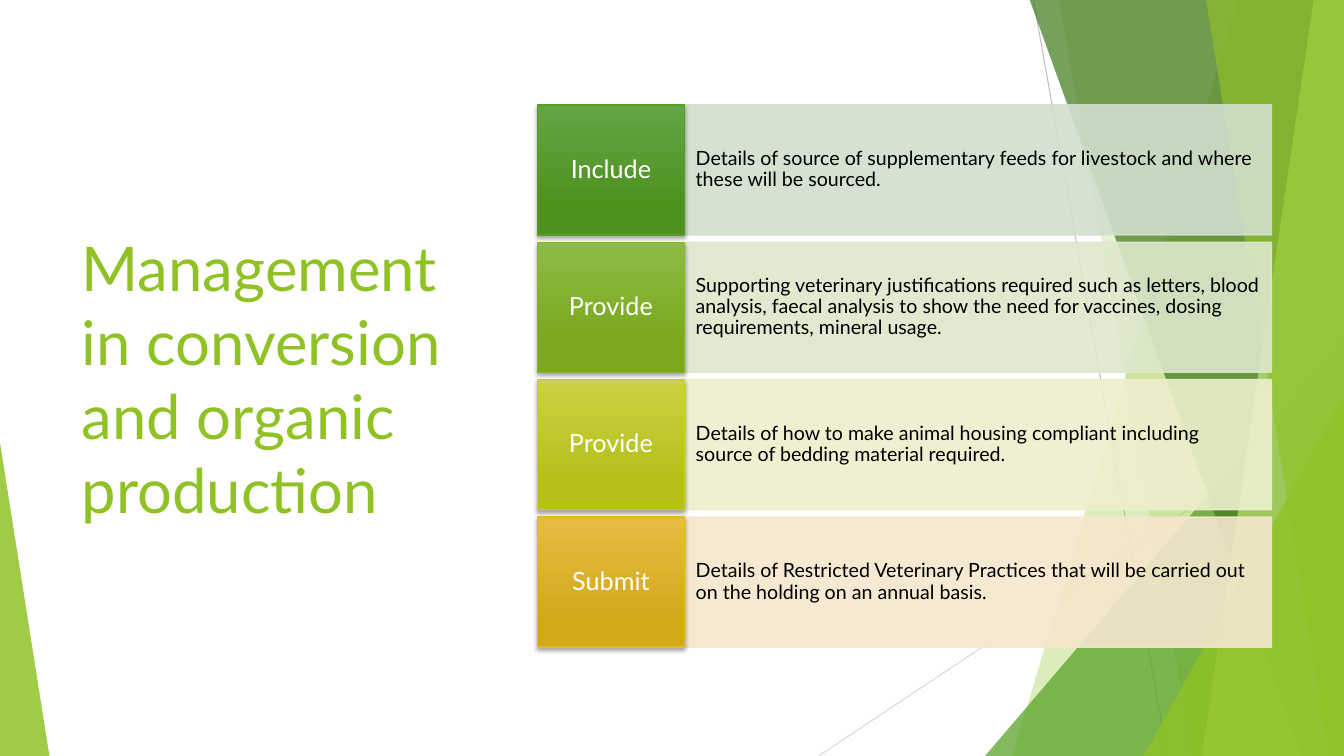
from lxml import etree
from pptx import Presentation
from pptx import util as u
from pptx.dml.color import RGBColor
from pptx.enum import shapes, text
from pptx.oxml import ns

WHITE = RGBColor(0xFF, 0xFF, 0xFF)
BLACK = RGBColor(0x00, 0x00, 0x00)
LIME = RGBColor(0x90, 0xC2, 0x26)
GREEN = RGBColor(0x54, 0xA0, 0x21)
FOREST = RGBColor(0x3F, 0x78, 0x19)
PALE_LIME = RGBColor(0xC0, 0xE4, 0x74)
SILVER = RGBColor(0xBF, 0xBF, 0xBF)
MIST = RGBColor(0xD9, 0xD9, 0xD9)

TITLE = "Management in conversion and organic production"
ROWS = [
    ("Include",
     "Details of source of supplementary feeds for livestock and where these will be sourced.",
     "D1DFCD", "63A545", "4D921E", "54A021"),
    ("Provide",
     "Supporting veterinary justifications required such as letters, blood analysis, "
     "faecal analysis to show the need for vaccines, dosing requirements, mineral usage.",
     "DCE8CC", "8EBB44", "7BA81D", "86B820"),
    ("Provide",
     "Details of how to make animal housing compliant including source of bedding "
     "material required.",
     "EEEFCC", "CAD243", "B6BF1B", "C7D01D"),
    ("Submit",
     "Details of Restricted Veterinary Practices that will be carried out on the holding "
     "on an annual basis.",
     "F5E7CD", "E7BC43", "D2A91B", "E6B91E"),
]

TOP, BOTTOM, RIGHT = -0.01, 7.5, 13.33
ROW_TOP, ROW_PITCH, ROW_HEIGHT = 1.04, 4.09 / 3, 1.29
LABEL_LEFT, LABEL_WIDTH, DETAIL_WIDTH = 5.33, 1.46, 5.82


def sub(parent, tag, **attrs):
    return etree.SubElement(parent, ns.qn(tag), {k: str(v) for k, v in attrs.items()})


def apply(obj, values):
    for name, value in values.items():
        setattr(obj, name, value)


class Deck:
    font = "Lato"

    def __init__(self, prs):
        self.slide = prs.slides.add_slide(prs.slide_layouts[5])
        self.shapes = self.slide.shapes

    def fade(self, fill, alpha):
        color = fill._xPr.find(ns.qn("a:solidFill"))[0]
        sub(color, "a:alpha", val=alpha * 1000)

    def paint(self, sp, color, alpha):
        sp.shadow.inherit = False
        sp.fill.solid()
        sp.fill.fore_color.rgb = color
        self.fade(sp.fill, alpha)
        sp.line.fill.background()

    def set_text(self, sp, words, size, color, align, inset=(0.1, 0.05), spacing=None):
        x, y = map(u.Inches, inset)
        tf = sp.text_frame
        apply(tf, dict(word_wrap=True, auto_size=text.MSO_AUTO_SIZE.NONE,
                       vertical_anchor=text.MSO_ANCHOR.MIDDLE,
                       margin_left=x, margin_right=x, margin_top=y, margin_bottom=y))
        p = tf.paragraphs[0]
        apply(p, dict(alignment=align, line_spacing=spacing))
        r = p.add_run()
        r.text = words
        apply(r.font, dict(name=self.font, size=u.Pt(size)))
        r.font.color.rgb = color

    def title(self, words, box):
        sp = self.shapes.title
        apply(sp, dict(zip(("left", "top", "width", "height"), map(u.Inches, box))))
        self.set_text(sp, words, 44, LIME, text.PP_ALIGN.LEFT)

    def line(self, start, end, color):
        cx = self.shapes.add_connector(shapes.MSO_CONNECTOR.STRAIGHT,
                                       *map(u.Inches, start + end))
        cx.line.width = u.Pt(0.75)
        cx.line.color.rgb = color
        sub(cx._element.spPr, "a:effectLst")

    def facet(self, top_x, bottom_x, color, alpha):
        points = [(top_x, TOP), (RIGHT, TOP), (RIGHT, BOTTOM), (bottom_x, BOTTOM)]
        points = [(u.Inches(x), u.Inches(y)) for x, y in points]
        fb = self.shapes.build_freeform(*points[0])
        fb.add_line_segments(points[1:], close=True)
        self.paint(fb.convert_to_shape(), color, alpha)

    def triangle(self, box, apex, color, alpha):
        sp = self.shapes.add_shape(shapes.MSO_SHAPE.ISOSCELES_TRIANGLE, *map(u.Inches, box))
        sp.adjustments[0] = apex
        self.paint(sp, color, alpha)

    def rect(self, box, border):
        sp = self.shapes.add_shape(shapes.MSO_SHAPE.RECTANGLE, *map(u.Inches, box))
        sp.shadow.inherit = False
        sp.line.color.rgb = border
        sp.line.width = u.Pt(1)
        return sp

    def detail(self, box, words, tint):
        sp = self.rect(box, tint)
        sp.fill.solid()
        sp.fill.fore_color.rgb = tint
        self.fade(sp.fill, 90)
        self.fade(sp.line.fill, 90)
        self.set_text(sp, words, 14, BLACK, text.PP_ALIGN.LEFT, (0.11, 0.33), 0.9)

    def label(self, box, words, light, dark, border):
        sp = self.rect(box, border)
        sp.fill.gradient()
        sp.fill.gradient_angle = 270
        for stop, position, color in zip(sp.fill.gradient_stops, (0, 0.78), (light, dark)):
            stop.position = position
            stop.color.rgb = color
        effects = sp._element.spPr.find(ns.qn("a:effectLst"))
        shadow = sub(effects, "a:outerShdw", blurRad=u.Pt(3), dist=u.Pt(2),
                     dir=5400000, rotWithShape=0)
        sub(sub(shadow, "a:srgbClr", val=BLACK), "a:alpha", val=35000)
        self.set_text(sp, words, 18, WHITE, text.PP_ALIGN.CENTER, (0.08, 0.13), 0.9)


def main():
    prs = Presentation()
    prs.slide_width, prs.slide_height = u.Inches(13.33), u.Inches(7.5)
    deck = Deck(prs)

    deck.line((10.25, 0), (11.58, BOTTOM), SILVER)
    deck.line((RIGHT, 4.03), (8.12, BOTTOM), MIST)
    deck.facet(12.28, 10.04, LIME, 30)
    deck.facet(10.5, 11.83, LIME, 20)
    deck.triangle((9.77, 3.33, 3.56, 4.17), 1, GREEN, 72)
    deck.facet(10.21, 12.91, FOREST, 70)
    deck.facet(13.03, 11.92, PALE_LIME, 70)
    deck.facet(11.96, 13.18, LIME, 65)
    deck.triangle((11.34, 3.93, 1.99, 3.57), 1, LIME, 80)
    deck.triangle((0, 4.39, 0.49, 3.11), 0, LIME, 85)

    deck.title(TITLE, (0.71, 1.51, 3.88, 4.48))
    for i, (word, details, *colors) in enumerate(ROWS):
        tint, light, dark, border = map(RGBColor.from_string, colors)
        top = ROW_TOP + i * ROW_PITCH
        deck.detail((LABEL_LEFT + LABEL_WIDTH, top, DETAIL_WIDTH, ROW_HEIGHT), details, tint)
        deck.label((LABEL_LEFT, top, LABEL_WIDTH, ROW_HEIGHT), word, light, dark, border)

    prs.save("out.pptx")


if __name__ == "__main__":
    main()
